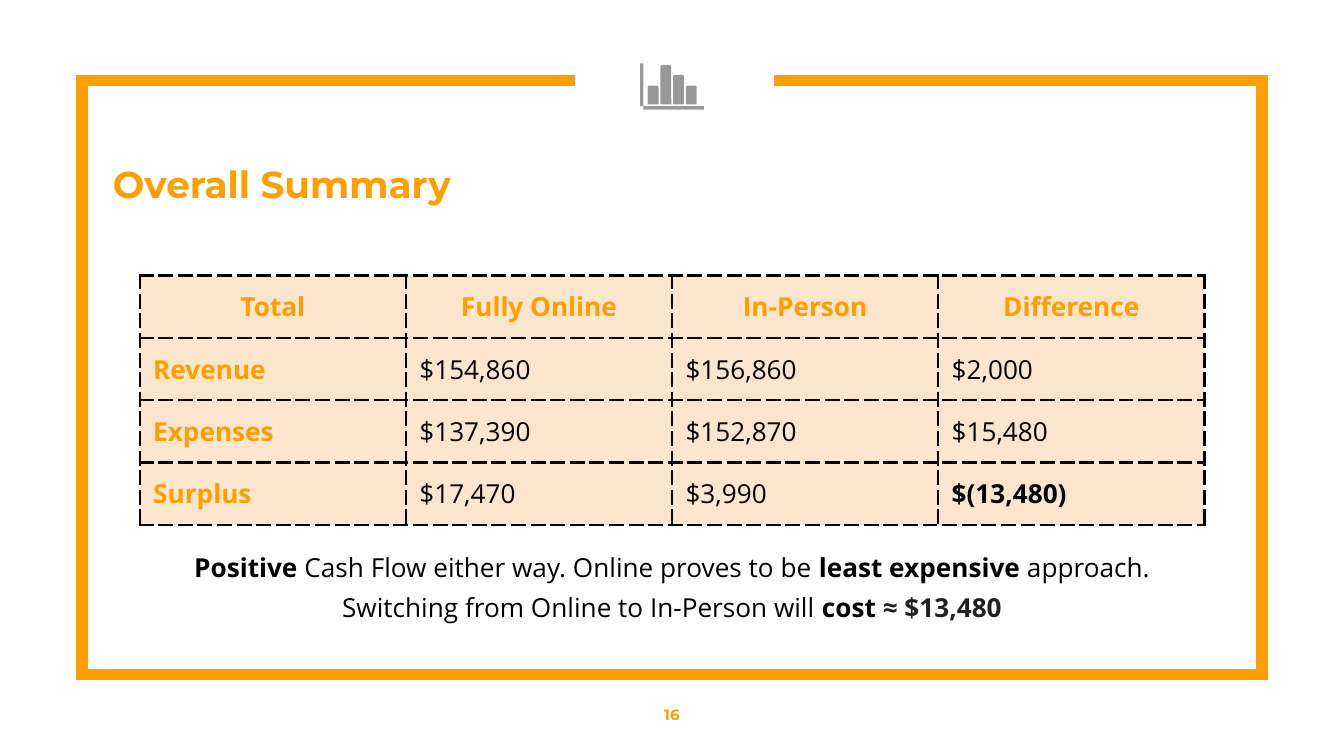
"""Build the overall summary slide comparing online and in-person cash flow."""
from dataclasses import dataclass

from lxml.etree import SubElement
from pptx import Presentation
from pptx.dml.color import RGBColor
from pptx.enum.shapes import MSO_SHAPE
from pptx.enum.text import MSO_ANCHOR, PP_ALIGN
from pptx.oxml.ns import qn
from pptx.util import Pt


@dataclass(frozen=True)
class Theme:
    accent: RGBColor = RGBColor(0xFF, 0x9E, 0x00)
    icon: RGBColor = RGBColor(0x99, 0x99, 0x99)
    cell: RGBColor = RGBColor(0xFC, 0xE5, 0xCD)
    ink: RGBColor = RGBColor(0, 0, 0)
    dark: RGBColor = RGBColor(0x20, 0x21, 0x24)
    heading: str = "Montserrat"
    body: str = "Open Sans"
    title_size: int = 20
    body_size: int = 14
    number_size: int = 8


theme = Theme()


def style(font, name, size, color, bold=False):
    font.name = name
    font.size = Pt(size)
    font.color.rgb = color
    font.bold = bold


def add_text(left, top, width, height, inset, anchor):
    frame = page.shapes.add_textbox(Pt(left), Pt(top), Pt(width), Pt(height)).text_frame
    frame.word_wrap = True
    frame.vertical_anchor = anchor
    frame.margin_left = frame.margin_right = Pt(inset)
    frame.margin_top = frame.margin_bottom = Pt(inset)
    return frame


deck = Presentation()
deck.slide_width, deck.slide_height = Pt(720), Pt(405)
page = deck.slides.add_slide(deck.slide_layouts[6])

corners = [(43.9, 43.2), (43.9, 361.4), (676.1, 361.4), (676.1, 43.2), (414.7, 43.2)]
builder = page.shapes.build_freeform(Pt(308.2), Pt(43.2), scale=1.0)
builder.add_line_segments([(Pt(x), Pt(y)) for x, y in corners], close=False)
border = builder.convert_to_shape()
border.shadow.inherit = False
border.fill.background()
border.line.color.rgb = theme.accent
border.line.width = Pt(6)
SubElement(border.line._get_or_add_ln(), qn("a:miter"), lim="800000")

icon = page.shapes.add_group_shape()
axis = [(342.9, 56.9), (377.1, 56.9), (377.1, 58.8), (344.7, 58.8), (344.7, 34)]
builder = icon.shapes.build_freeform(Pt(342.9), Pt(34), scale=1.0)
builder.add_line_segments([(Pt(x), Pt(y)) for x, y in axis], close=True)
parts = [builder.convert_to_shape()]
for index, height in enumerate([10, 21.1, 15.7, 10]):
    parts.append(icon.shapes.add_shape(
        MSO_SHAPE.ROUND_2_SAME_RECTANGLE,
        Pt(347 + 6.8 * index), Pt(55.9 - height), Pt(5.8), Pt(height)))
for part in parts:
    part.shadow.inherit = False
    part.fill.solid()
    part.fill.fore_color.rgb = theme.icon
    part.line.fill.background()

para = add_text(0, 361.4, 720, 43.2, 7.2, MSO_ANCHOR.MIDDLE).paragraphs[0]
para.text = "16"
para.alignment = PP_ALIGN.CENTER
style(para.font, theme.heading, theme.number_size, theme.accent, True)

para = add_text(60.5, 77, 594, 43.2, 0, MSO_ANCHOR.MIDDLE).paragraphs[0]
para.text = "Overall Summary"
style(para.font, theme.heading, theme.title_size, theme.accent, True)

rows = [
    ["Total", "Fully Online", "In-Person", "Difference"],
    ["Revenue", "$154,860", "$156,860", "$2,000"],
    ["Expenses", "$137,390", "$152,870", "$15,480"],
    ["Surplus", "$17,470", "$3,990", "$(13,480)"],
]
table = page.shapes.add_table(4, 4, Pt(74.9), Pt(147.6), Pt(570.4), Pt(133.6)).table
table.first_row = table.horz_banding = False
for column in table.columns:
    column.width = Pt(142.6)
for row_index, values in enumerate(rows):
    table.rows[row_index].height = Pt(33.4)
    for column_index, value in enumerate(values):
        cell = table.cell(row_index, column_index)
        cell.margin_left = cell.margin_right = Pt(7.2)
        cell.margin_top = cell.margin_bottom = Pt(7.2)
        para = cell.text_frame.paragraphs[0]
        para.text = value
        para.alignment = PP_ALIGN.LEFT if row_index else PP_ALIGN.CENTER
        label = row_index == 0 or column_index == 0
        style(para.font, theme.body, theme.body_size,
              theme.accent if label else theme.ink, label or value == "$(13,480)")
        properties = cell._tc.get_or_add_tcPr()
        for side in ("lnL", "lnR", "lnT", "lnB"):
            edge = SubElement(properties, qn(f"a:{side}"), w=str(Pt(1.5)))
            SubElement(SubElement(edge, qn("a:solidFill")), qn("a:srgbClr"), val=str(theme.ink))
            SubElement(edge, qn("a:prstDash"), val="lgDash")
        cell.fill.solid()
        cell.fill.fore_color.rgb = theme.cell

conclusion = [
    [("Positive", True, theme.ink),
     (" Cash Flow either way. Online proves to be ", False, theme.ink),
     ("least expensive", True, theme.ink),
     (" approach.", False, theme.ink)],
    [("Switching from Online to In-Person will ", False, theme.ink),
     ("cost ", True, theme.ink),
     ("≈ $13,480", True, theme.dark)],
]
frame = add_text(74.9, 290.2, 570.2, 58.3, 7.2, MSO_ANCHOR.TOP)
for index, spans in enumerate(conclusion):
    para = frame.add_paragraph() if index else frame.paragraphs[0]
    para.alignment = PP_ALIGN.CENTER
    para.space_before = Pt(6)
    para.line_spacing = 0.9
    for text, bold, color in spans:
        span = para.add_run()
        span.text = text
        style(span.font, theme.body, theme.body_size, color, bold)

deck.save("out.pptx")
